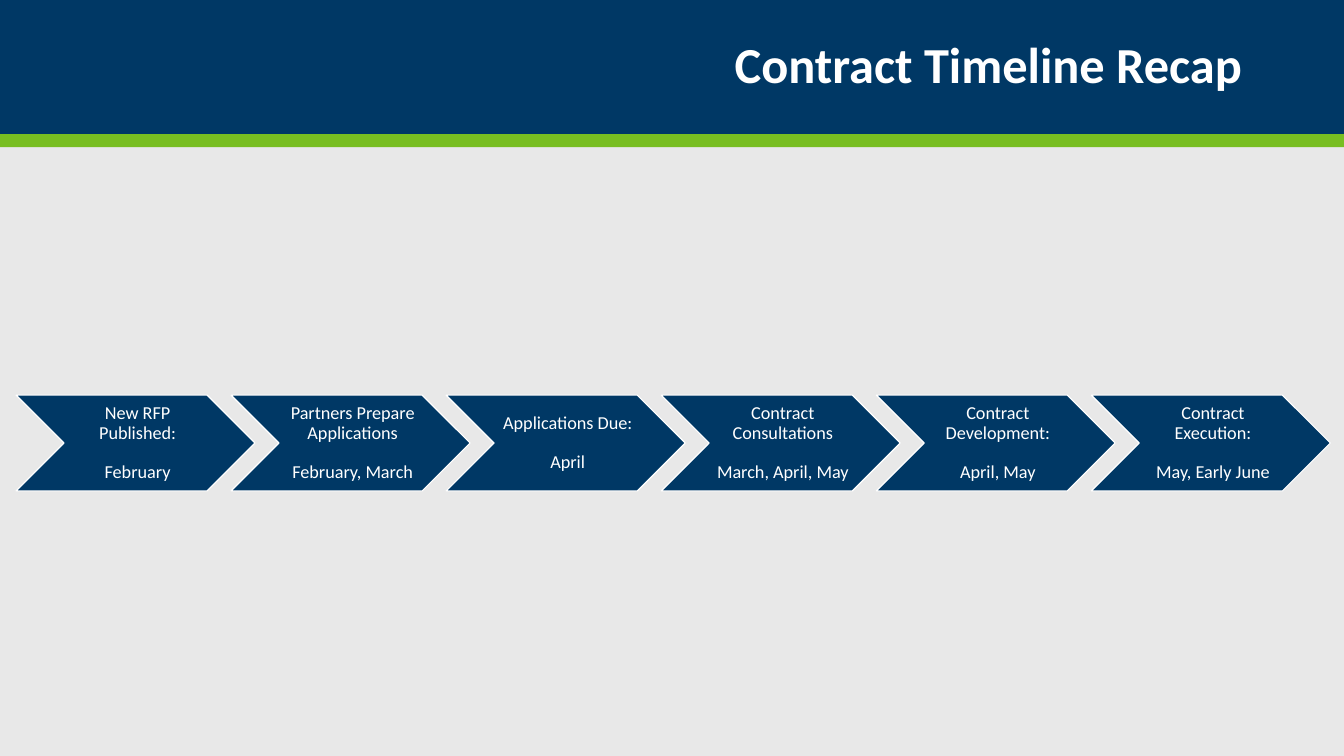
from pptx import Presentation
from pptx.dml.color import RGBColor
from pptx.enum.shapes import MSO_SHAPE
from pptx.enum.text import MSO_ANCHOR, PP_ALIGN
from pptx.util import Inches, Pt

RECTANGLE, CHEVRON = MSO_SHAPE.RECTANGLE, MSO_SHAPE.CHEVRON
MIDDLE = MSO_ANCHOR.MIDDLE
CENTER, RIGHT = PP_ALIGN.CENTER, PP_ALIGN.RIGHT

TITLE = "Contract Timeline Recap"
STAGES = [
    ("New RFP Published:", "February"),
    ("Partners Prepare Applications", "February, March"),
    ("Applications Due:", "April"),
    ("Contract Consultations", "March, April, May"),
    ("Contract Development:", "April, May"),
    ("Contract Execution:", "May, Early June"),
]
COLORS = {"navy": "003865", "green": "78BE21", "white": "FFFFFF", "backdrop": "E8E8E8"}
FONT = "Calibri"

SLIDE_W, SLIDE_H = 13.33, 7.5
HEADER_H, STRIPE_H = 1.33, 0.13
STAGE_W, STAGE_H = 2.37, 0.95
STAGE_OVERLAP = STAGE_W / 10
STAGE_STEP = STAGE_W - STAGE_OVERLAP
STAGE_LEFT, STAGE_TOP = 0.16, 3.92


def rgb(name):
    return RGBColor.from_string(COLORS[name])


def add_block(kind, left, top, width, height, color):
    block = slide.shapes.add_shape(
        kind, Inches(left), Inches(top), Inches(width), Inches(height))
    block.shadow.inherit = False
    block.fill.solid()
    block.fill.fore_color.rgb = rgb(color)
    block.line.fill.background()
    return block


def write(paragraph, text, size, align, bold=False):
    paragraph.alignment = align
    paragraph.line_spacing = 0.9
    run = paragraph.add_run()
    run.text = text
    run.font.name = FONT
    run.font.size = Pt(size)
    run.font.bold = bold
    run.font.color.rgb = rgb("white")


prs = Presentation()
prs.slide_width, prs.slide_height = Inches(SLIDE_W), Inches(SLIDE_H)
slide = prs.slides.add_slide(prs.slide_layouts[5])
slide.background.fill.solid()
slide.background.fill.fore_color.rgb = rgb("backdrop")

add_block(RECTANGLE, 0, 0, SLIDE_W, HEADER_H, "navy")
add_block(RECTANGLE, 0, HEADER_H, SLIDE_W, STRIPE_H, "green")

title = slide.shapes.title
slide.shapes._spTree.append(title._element)
title.left, title.top = Inches(0.92), Inches(0.17)
title.width, title.height = Inches(11.5), Inches(1)
title.text_frame.vertical_anchor = MIDDLE
write(title.text_frame.paragraphs[0], TITLE, 36, RIGHT, bold=True)

for index, (stage, months) in enumerate(STAGES):
    step = add_block(CHEVRON, STAGE_LEFT + index * STAGE_STEP, STAGE_TOP,
                     STAGE_W, STAGE_H, "navy")
    step.line.color.rgb = rgb("white")
    step.line.width = Pt(0.85)
    frame = step.text_frame
    frame.word_wrap = True
    frame.vertical_anchor = MIDDLE
    frame.margin_left = Inches(0.06)
    frame.margin_right = frame.margin_top = frame.margin_bottom = Inches(0.02)
    write(frame.paragraphs[0], stage, 13, CENTER)
    month_line = frame.add_paragraph()
    month_line.space_before = Pt(14)
    write(month_line, months, 13, CENTER)

prs.save("out.pptx")
